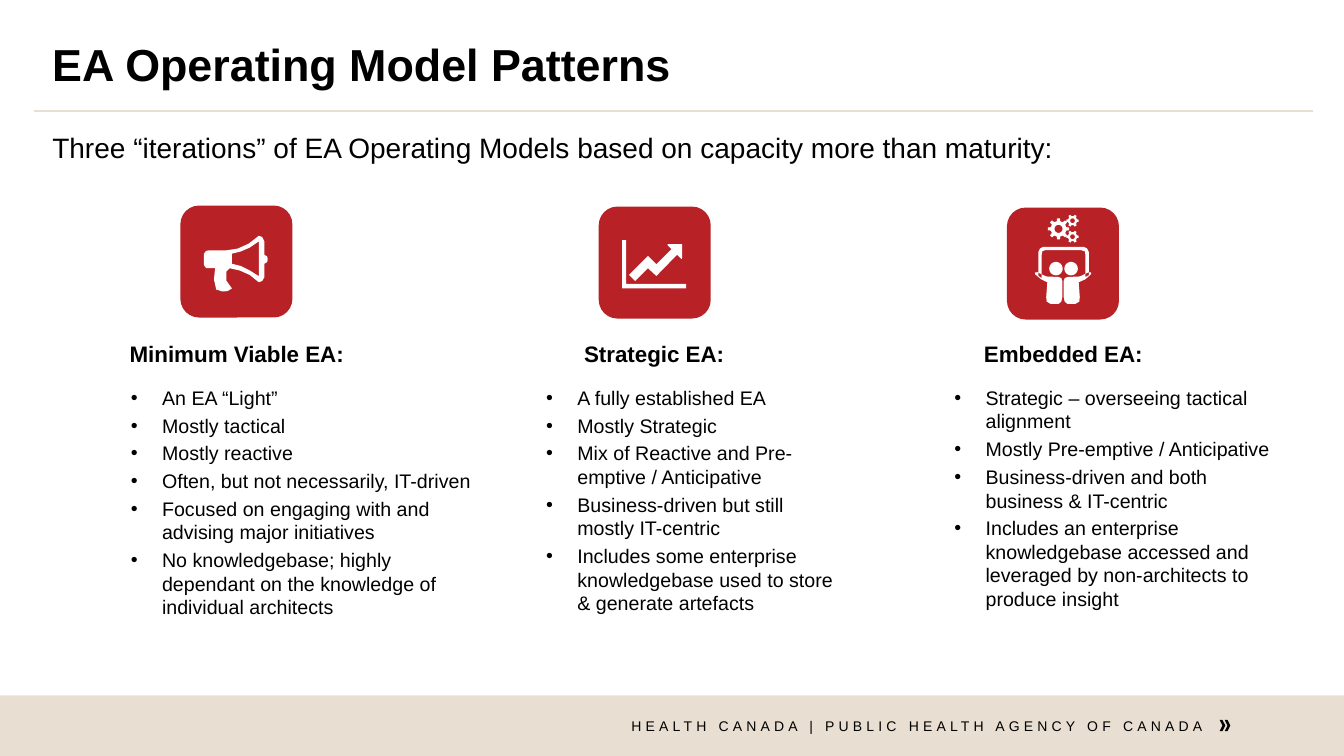
from dataclasses import dataclass
from math import cos, pi, sin

from lxml.etree import SubElement
from pptx import Presentation
from pptx.dml.color import RGBColor as Color
from pptx.enum.shapes import MSO_CONNECTOR as Connector, MSO_SHAPE as Preset
from pptx.enum.text import MSO_ANCHOR as Anchor, PP_ALIGN as Align
from pptx.oxml.ns import qn
from pptx.util import Inches, Pt


@dataclass(frozen=True)
class Theme:
    font: str = "Arial"
    ink: str = "000000"
    sand: str = "E8DFD2"
    red: str = "B82126"
    white: str = "FFFFFF"
    title: int = 32
    lead: int = 20
    heading: int = 16
    body: int = 14
    footer: int = 10


THEME = Theme()
WIDTH, HEIGHT = Inches(13.33), Inches(7.5)
COLUMNS = 120
UNIT = WIDTH / COLUMNS
TILE = 10

MEGAPHONE = [
    [(23, 56), (21, 53), (21, 43), (23, 40.5), (26, 40), (41, 40), (51, 38.5), (61, 34),
     (70, 27), (73, 28), (75, 32), (75, 44), (77.5, 45.5), (78, 48), (77.5, 50.5), (75, 52),
     (75, 64), (73, 67.5), (70, 68.5), (62, 62), (53, 58), (44, 56), (41, 59), (41, 67),
     (46, 74), (42, 76.5), (37, 76.6), (32, 75), (30, 66), (31, 56)],
    [(46, 43), (54, 41), (62, 37.5), (70, 32), (70, 63), (62, 58), (54, 54), (46, 52)],
]
TREND = [
    [(21, 30), (24.5, 30), (24.5, 69), (78, 69), (78, 73), (21, 73)],
    [(74.5, 33.5), (61.5, 33.5), (61.5, 34.5), (65, 38), (51.5, 51.5), (44, 44), (27, 61),
     (32.5, 66.5), (44, 55), (51.5, 62), (70, 43), (74, 47), (74.5, 46)],
]
SCREEN = [(31, 63), (28, 61), (28, 39.5), (29.5, 36.5), (32.5, 35), (68.5, 35), (71.5, 36.5),
          (73, 39.5), (73, 60.5), (70, 62), (70, 42), (69.5, 39), (66, 38), (34, 38),
          (31.5, 39), (31, 42)]
LEFT_PERSON = [(25, 59.5), (25, 58), (27, 57.7), (35, 61.5), (46, 62), (48.6, 63), (49.5, 66),
               (49.5, 79.3), (48.5, 84), (46, 86), (39, 86), (35.5, 84), (35, 80), (36, 66.7),
               (30.5, 64)]
RIGHT_PERSON = [(50.5, 65.8), (51.5, 63), (54, 62), (65, 61.5), (73, 57.7), (75, 58),
                (75, 59.5), (70, 64), (64, 66.7), (65, 80), (64.5, 84), (61, 86), (54, 86),
                (51.5, 84), (50.5, 79.3)]


def grid(*lengths):
    return [round(length * UNIT) for length in lengths]


def circle(x, y, radius, steps=24):
    angles = [2 * pi * step / steps for step in range(steps)]
    return [(x + radius * cos(angle), y + radius * sin(angle)) for angle in angles]


def gear(x, y, radius, teeth):
    rim = []
    for tooth in range(teeth):
        for offset, share in ((-0.28, 0.74), (-0.17, 1), (0.17, 1), (0.28, 0.74)):
            angle = 2 * pi * (tooth + offset) / teeth
            rim.append((x + share * radius * cos(angle), y + share * radius * sin(angle)))
    return [rim, circle(x, y, radius * 0.38)]


EMBEDDED = [
    *gear(46, 19, 9.5, 8), *gear(58.5, 11.7, 5.6, 6), *gear(58.5, 26, 5.6, 6),
    SCREEN, LEFT_PERSON, RIGHT_PERSON, circle(43.7, 54.5, 6), circle(57.2, 54.5, 6),
]

PATTERNS = [
    ("Minimum Viable EA:", 7.47, (16.11, 18.36), MEGAPHONE, (10.8, 32.31), [
        "An EA “Light”", "Mostly tactical", "Mostly reactive",
        "Often, but not necessarily, IT-driven",
        "Focused on engaging with and advising major initiatives",
        "No knowledgebase; highly dependant on the knowledge of individual architects"]),
    ("Strategic EA:", 44.73, (53.46, 18.45), TREND, (47.88, 28.26), [
        "A fully established EA", "Mostly Strategic",
        "Mix of Reactive and Pre-emptive / Anticipative",
        "Business-driven but still mostly IT-centric",
        "Includes some enterprise knowledgebase used to store & generate artefacts"]),
    ("Embedded EA:", 81.27, (89.91, 18.54), EMBEDDED, (84.33, 30.33), [
        "Strategic – overseeing tactical alignment", "Mostly Pre-emptive / Anticipative",
        "Business-driven and both business & IT-centric",
        "Includes an enterprise knowledgebase accessed and leveraged by non-architects "
        "to produce insight"]),
]


def paint(shape, color):
    shape.shadow.inherit = False
    shape.fill.solid()
    shape.fill.fore_color.rgb = Color.from_string(color)
    shape.line.fill.background()


def add_block(slide, preset, box, color):
    shape = slide.shapes.add_shape(preset, *grid(*box))
    paint(shape, color)


def add_rule(slide, left, right, top, color):
    line = slide.shapes.add_connector(Connector.STRAIGHT, *grid(left, top, right, top))
    line.line.color.rgb = Color.from_string(color)
    line.line.width = Pt(1.5)
    SubElement(line._element.spPr, qn("a:effectLst"))


def add_text(slide, box, lines, size, bold=False, align=Align.LEFT):
    shape = slide.shapes.add_textbox(*grid(*box))
    frame = shape.text_frame
    frame.text = "\n".join(lines)
    frame.word_wrap = True
    for paragraph in frame.paragraphs:
        paragraph.alignment = align
        for run in paragraph.runs:
            run.font.name = THEME.font
            run.font.size = Pt(size)
            run.font.bold = bold
            run.font.color.rgb = Color.from_string(THEME.ink)
    return frame


def add_bullets(slide, box, lines):
    indent, = grid(2.79)
    for paragraph in add_text(slide, box, lines, THEME.body).paragraphs:
        paragraph.space_after = Pt(3)
        properties = paragraph._p.get_or_add_pPr()
        properties.set("marL", str(indent))
        properties.set("indent", str(-indent))
        SubElement(properties, qn("a:buFont")).set("typeface", THEME.font)
        SubElement(properties, qn("a:buChar")).set("char", "•")


def add_icon(slide, left, top, outlines):
    add_block(slide, Preset.ROUNDED_RECTANGLE, (left, top, TILE, TILE), THEME.red)
    share = TILE / 100
    placed = [[tuple(grid(left + x * share, top + y * share)) for x, y in outline]
              for outline in outlines]
    builder = slide.shapes.build_freeform(*placed[0][0])
    for index, points in enumerate(placed):
        if index:
            builder.move_to(*points[0])
        builder.add_line_segments(points[1:], close=True)
    paint(builder.convert_to_shape(), THEME.white)


def add_footer(slide):
    add_block(slide, Preset.RECTANGLE, (0, 62.1, COLUMNS, 5.4), THEME.sand)
    for index in range(2):
        add_block(slide, Preset.CHEVRON, (108.9 + index * 0.45, 64.3, 0.5, 1), THEME.ink)
    frame = add_text(slide, (52.74, 64.08, 54.63, 1.98),
                     ["HEALTH CANADA | PUBLIC HEALTH AGENCY OF CANADA"],
                     THEME.footer, align=Align.RIGHT)
    frame.margin_left = frame.margin_right = frame.margin_top = 0
    frame.paragraphs[0].runs[0].font._element.set("spc", "300")


def add_header(slide):
    add_rule(slide, 3.06, 117.27, 9.9, THEME.sand)
    title = add_text(slide, (3.78, 2.7, 112.5, 6.57), ["EA Operating Model Patterns"],
                     THEME.title, bold=True)
    title.vertical_anchor = Anchor.MIDDLE
    lead = add_text(
        slide, (3.78, 11.52, 112.59, 4.23),
        ["Three “iterations” of EA Operating Models based on capacity more than maturity:"],
        THEME.lead)
    for frame in (title, lead):
        frame.paragraphs[0].line_spacing = 0.9


def main():
    presentation = Presentation()
    presentation.slide_width, presentation.slide_height = WIDTH, HEIGHT
    slide = presentation.slides.add_slide(presentation.slide_layouts[6])
    add_footer(slide)
    add_header(slide)
    for heading, heading_left, tile, outlines, (left, width), lines in PATTERNS:
        add_icon(slide, *tile, outlines)
        add_text(slide, (heading_left, 29.97, 27.36, 3.33), [heading], THEME.heading,
                 bold=True, align=Align.CENTER)
        add_bullets(slide, (left, 34.02, width, 21.6), lines)
    presentation.save("out.pptx")


if __name__ == "__main__":
    main()
